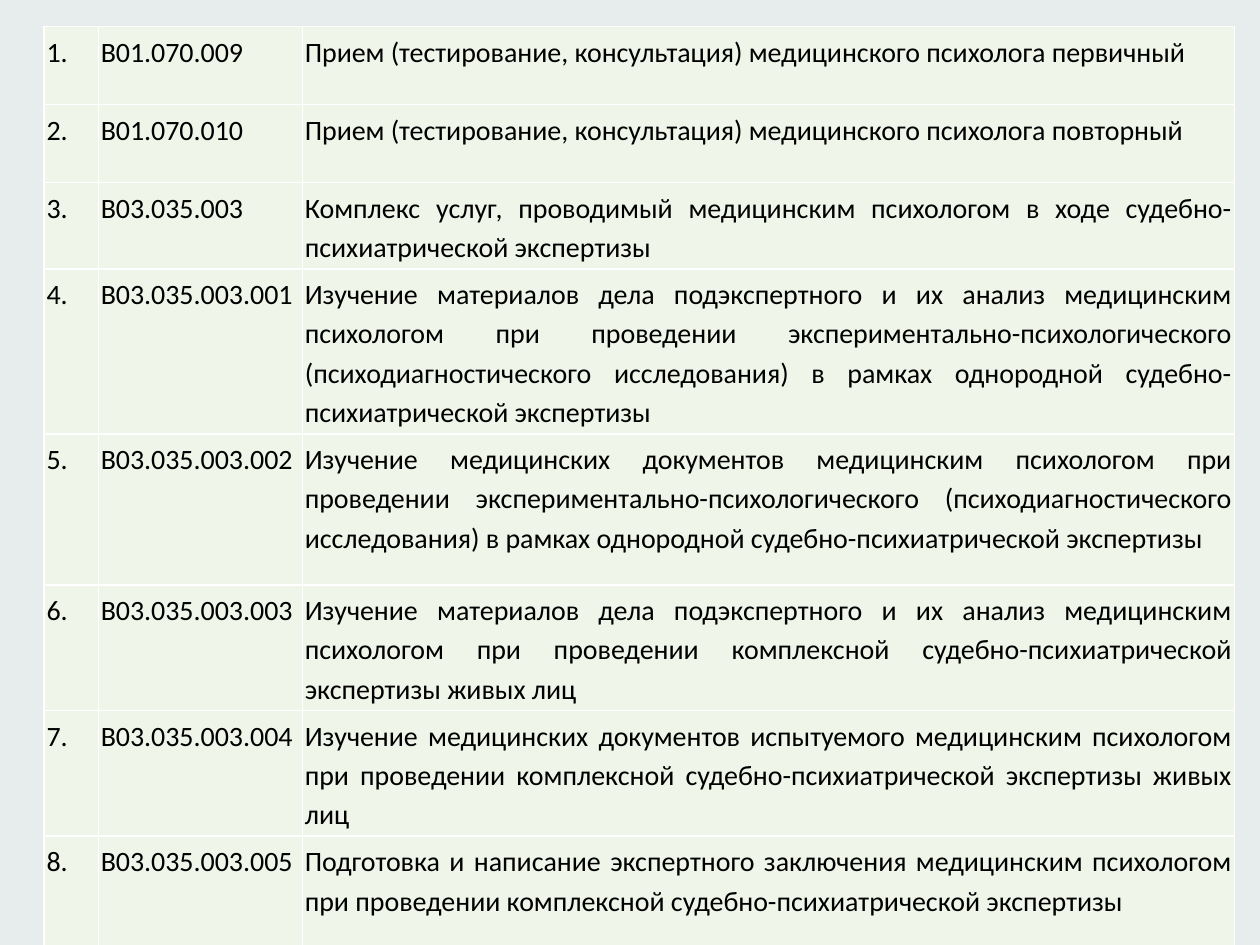
from dataclasses import dataclass

from lxml.etree import SubElement
from pptx import Presentation
from pptx.dml.color import RGBColor
from pptx.dml.fill import FillFormat
from pptx.enum.text import PP_ALIGN as Align
from pptx.oxml.ns import qn
from pptx.slide import Slide
from pptx.table import _Cell as Cell
from pptx.util import Inches, Pt

BACKGROUND = "E7ECED"
CELL_FILL = "EFF5E8"
BORDER = "FFFFFF"
INK = "000000"
COLUMN_WIDTHS = (0.43, 1.62, 7.4)


@dataclass(frozen=True)
class Service:
    code: str
    title: str
    height: float


SERVICES = (
    Service("B01.070.009", "Прием (тестирование, консультация) медицинского психолога первичный", 0.62),
    Service("B01.070.010", "Прием (тестирование, консультация) медицинского психолога повторный", 0.62),
    Service("B03.035.003", "Комплекс услуг, проводимый медицинским психологом в ходе "
            "судебно-психиатрической экспертизы", 0.62),
    Service("B03.035.003.001", "Изучение материалов дела подэкспертного и их анализ медицинским "
            "психологом при проведении экспериментально-психологического (психодиагностического "
            "исследования) в рамках однородной судебно-психиатрической экспертизы", 1.2),
    Service("B03.035.003.002", "Изучение медицинских документов медицинским психологом при "
            "проведении экспериментально-психологического (психодиагностического исследования) "
            "в рамках однородной судебно-психиатрической экспертизы", 1.2),
    Service("B03.035.003.003", "Изучение материалов дела подэкспертного и их анализ медицинским "
            "психологом при проведении комплексной судебно-психиатрической экспертизы живых лиц", 0.91),
    Service("B03.035.003.004", "Изучение медицинских документов испытуемого медицинским психологом "
            "при проведении комплексной судебно-психиатрической экспертизы живых лиц", 0.91),
    Service("B03.035.003.005", "Подготовка и написание экспертного заключения медицинским психологом "
            "при проведении комплексной судебно-психиатрической экспертизы", 0.91),
)


def rgb(value: str) -> RGBColor:
    return RGBColor.from_string(value)


def paint(fill: FillFormat, color: str) -> None:
    fill.solid()
    fill.fore_color.rgb = rgb(color)


def outline(cell: Cell) -> None:
    properties = cell._tc.get_or_add_tcPr()
    for position, side in enumerate(("lnL", "lnR", "lnT", "lnB")):
        edge = SubElement(properties, qn(f"a:{side}"), w=str(Pt(1)))
        solid = SubElement(edge, qn("a:solidFill"))
        SubElement(solid, qn("a:srgbClr"), val=BORDER)
        properties.insert(position, edge)


def write_cell(cell: Cell, content: str) -> None:
    cell.margin_left = cell.margin_right = Inches(0.02)
    cell.margin_top = cell.margin_bottom = Inches(0.03)
    paint(cell.fill, CELL_FILL)
    outline(cell)
    cell.text_frame.text = content
    paragraph = cell.text_frame.paragraphs[0]
    paragraph.alignment = Align.JUSTIFY
    paragraph.line_spacing = 1.15
    font = paragraph.runs[0].font
    font.name = "Calibri"
    font.size = Pt(16)
    font.color.rgb = rgb(INK)


def draw_services(slide: Slide, services: tuple[Service, ...]) -> None:
    height = sum(service.height for service in services)
    register = slide.shapes.add_table(
        len(services), len(COLUMN_WIDTHS), Inches(0.35), Inches(0.21),
        Inches(sum(COLUMN_WIDTHS)), Inches(height),
    ).table
    register.first_row = False
    register.horz_banding = False
    for column, width in zip(register.columns, COLUMN_WIDTHS):
        column.width = Inches(width)
    for number, (row, service) in enumerate(zip(register.rows, services), start=1):
        row.height = Inches(service.height)
        for cell, content in zip(row.cells, (f"{number}.", service.code, service.title)):
            write_cell(cell, content)


def main() -> None:
    presentation = Presentation()
    presentation.slide_width = Inches(10)
    presentation.slide_height = Inches(7.5)
    slide = presentation.slides.add_slide(presentation.slide_layouts[6])
    paint(slide.background.fill, BACKGROUND)
    draw_services(slide, SERVICES)
    presentation.save("out.pptx")


if __name__ == "__main__":
    main()
